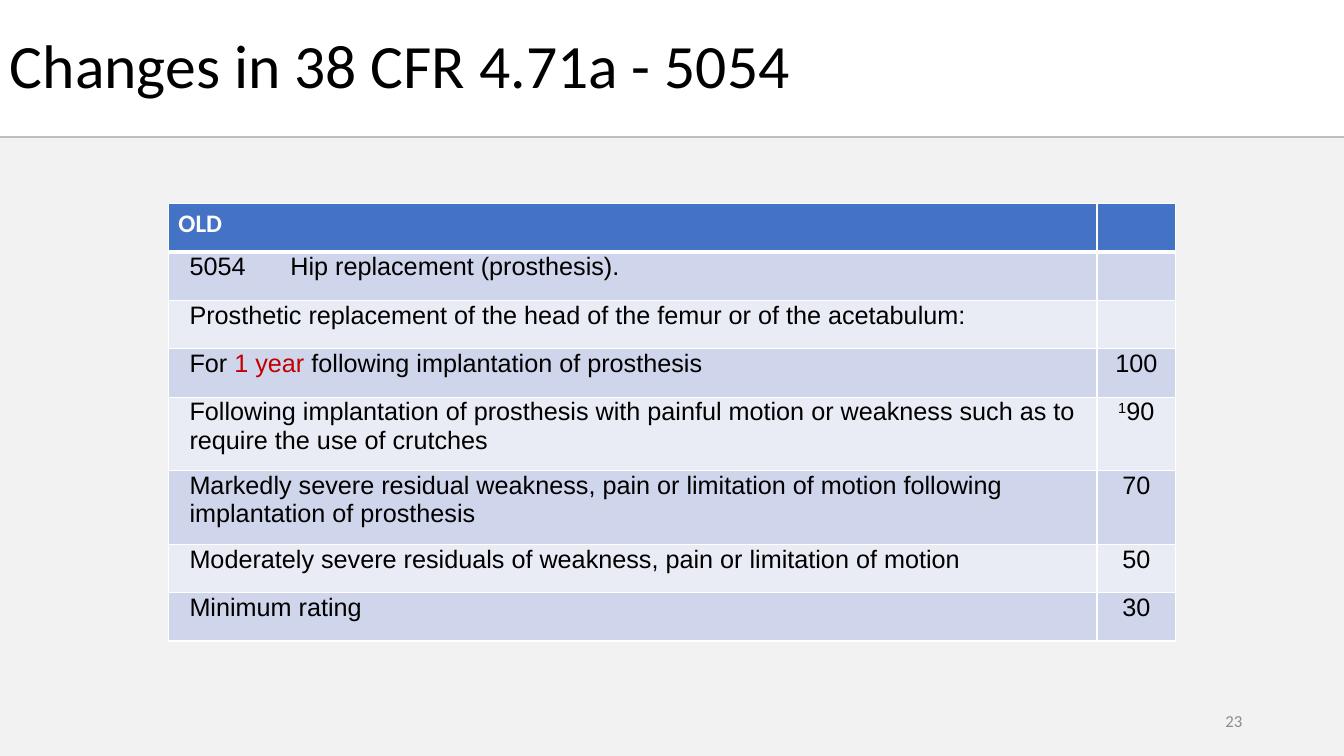
import pptx
import pptx.util
import pptx.dml.color
import pptx.enum.shapes
import pptx.enum.text
import pptx.oxml
import pptx.oxml.ns
from lxml import etree

Inches = pptx.util.Inches
Pt = pptx.util.Pt
RGBColor = pptx.dml.color.RGBColor
Align = pptx.enum.text.PP_ALIGN
Anchor = pptx.enum.text.MSO_ANCHOR
qn = pptx.oxml.ns.qn

WHITE = RGBColor(0xFF, 0xFF, 0xFF)
BLACK = RGBColor(0, 0, 0)
RED = RGBColor(0xC0, 0, 0)
PANEL = RGBColor(0xF2, 0xF2, 0xF2)
RULE = RGBColor(0xBF, 0xBF, 0xBF)
PAGE_NUMBER = RGBColor(0x8C, 0x8C, 0x8C)
HEADER = RGBColor(0x44, 0x72, 0xC4)
BANDS = (RGBColor(0xCF, 0xD5, 0xEA), RGBColor(0xE9, 0xEB, 0xF5))

COLUMN_WIDTHS = (9.21, 0.78)
ROW_HEIGHT, TALL_ROW_HEIGHT = 0.48, 0.73
TALL_ROWS = (4, 5)
CELL_MARGIN, CRITERION_INDENT, NAME_TAB = 0.01, 0.2, 0.97

RATINGS = (
    (("5054\tHip replacement (prosthesis).",), ""),
    (("Prosthetic replacement of the head of the femur or of the acetabulum:",), ""),
    (("For ", "1 year ", "following implantation of prosthesis"), "100"),
    (("Following implantation of prosthesis with painful motion or weakness "
      "such as to require the use of crutches",), "90"),
    (("Markedly severe residual weakness, pain or limitation of motion "
      "following implantation of prosthesis",), "70"),
    (("Moderately severe residuals of weakness, pain or limitation of motion",), "50"),
    (("Minimum rating",), "30"),
)
FOOTNOTE_MARKS = {"90": "1"}


def add_span(para, text, size, font, color, bold=False):
    """Add one formatted run to a paragraph and return it."""
    span = para.add_run()
    span.text = text
    span.font.size = Pt(size)
    span.font.name = font
    span.font.bold = bold
    span.font.color.rgb = color
    return span


def add_text_box(page, box, text, size, color, align):
    """Place one line of text, vertically centred in the given box."""
    frame = page.shapes.add_textbox(*map(Inches, box)).text_frame
    frame.word_wrap = True
    frame.vertical_anchor = Anchor.MIDDLE
    para = frame.paragraphs[0]
    para.alignment = align
    add_span(para, text, size, "Calibri", color)
    return para


def add_backdrop(page, box):
    """Fill the box with the grey panel and rule off its top edge."""
    left, top, width, height = box
    panel = page.shapes.add_shape(
        pptx.enum.shapes.MSO_SHAPE.RECTANGLE, *map(Inches, box))
    panel.shadow.inherit = False
    panel.fill.solid()
    panel.fill.fore_color.rgb = PANEL
    panel.line.fill.background()
    rule = page.shapes.add_connector(
        pptx.enum.shapes.MSO_CONNECTOR.STRAIGHT, Inches(left),
        Inches(top - 0.01), Inches(left + width), Inches(top - 0.01))
    rule.line.color.rgb = RULE
    rule.line.width = Pt(1.5)
    etree.SubElement(rule._element.spPr, qn("a:effectLst"))


def style_cell(cell, fill, bottom_width):
    """Give a cell white borders and a solid fill."""
    properties = cell._tc.get_or_add_tcPr()
    widths = {"L": 1, "R": 1, "T": 1, "B": bottom_width}
    for side, width in widths.items():
        border = etree.SubElement(properties, qn(f"a:ln{side}"), w=str(Pt(width)))
        solid = etree.SubElement(border, qn("a:solidFill"))
        etree.SubElement(solid, qn("a:srgbClr"), val=str(WHITE))
    cell.fill.solid()
    cell.fill.fore_color.rgb = fill


def set_margins(cell):
    """Apply the narrow margins of the body cells."""
    cell.margin_left = cell.margin_right = Inches(CELL_MARGIN)
    cell.margin_top = cell.margin_bottom = Inches(CELL_MARGIN)


def fill_criterion(cell, parts):
    """Write an indented criterion, with its second part in red."""
    set_margins(cell)
    para = cell.text_frame.paragraphs[0]
    properties = para._p.get_or_add_pPr()
    properties.set("marL", str(Inches(CRITERION_INDENT)))
    properties.set("indent", "0")
    if "\t" in parts[0]:
        tabs = etree.SubElement(properties, qn("a:tabLst"))
        etree.SubElement(tabs, qn("a:tab"), pos=str(Inches(NAME_TAB)), algn="l")
    for index, part in enumerate(parts):
        add_span(para, part, 18, "Arial", RED if index == 1 else BLACK)


def fill_percentage(cell, percentage):
    """Write a centred percentage after its footnote mark, if any."""
    set_margins(cell)
    para = cell.text_frame.paragraphs[0]
    para.alignment = Align.CENTER
    if percentage in FOOTNOTE_MARKS:
        mark = add_span(para, FOOTNOTE_MARKS[percentage], 18, "Arial", BLACK)
        mark._r.get_or_add_rPr().set("baseline", "30000")
    add_span(para, percentage, 18, "Arial", BLACK)


def add_rating_table(page, box):
    """Place the banded table of ratings in the given box."""
    table = page.shapes.add_table(
        len(RATINGS) + 1, len(COLUMN_WIDTHS), *map(Inches, box)).table
    table.horz_banding = False
    for column, width in zip(table.columns, COLUMN_WIDTHS):
        column.width = Inches(width)
    for index, row in enumerate(table.rows):
        row.height = Inches(TALL_ROW_HEIGHT if index in TALL_ROWS else ROW_HEIGHT)
        for cell in row.cells:
            style_cell(cell, BANDS[(index - 1) % 2] if index else HEADER,
                       1 if index else 3)
    heading = table.cell(0, 0).text_frame.paragraphs[0]
    add_span(heading, "OLD", 18, "Calibri", WHITE, bold=True)
    for index, (parts, percentage) in enumerate(RATINGS, 1):
        fill_criterion(table.cell(index, 0), parts)
        if percentage:
            fill_percentage(table.cell(index, 1), percentage)


def main():
    """Build the slide and save the deck."""
    deck = pptx.Presentation()
    deck.slide_width, deck.slide_height = Inches(13.33), Inches(7.5)
    page = deck.slides.add_slide(deck.slide_layouts[6])
    add_backdrop(page, (0, 1.37, 13.33, 6.13))
    title = add_text_box(page, (0, 0.15, 8.83, 1.07),
                         "Changes in 38 CFR 4.71a - 5054", 44, BLACK, Align.LEFT)
    title.line_spacing = 0.9
    add_rating_table(page, (1.67, 2.02, 9.99, 4.34))
    add_text_box(page, (9.42, 6.95, 3, 0.4), "23", 12, PAGE_NUMBER, Align.RIGHT)
    deck.save("out.pptx")


if __name__ == "__main__":
    main()
